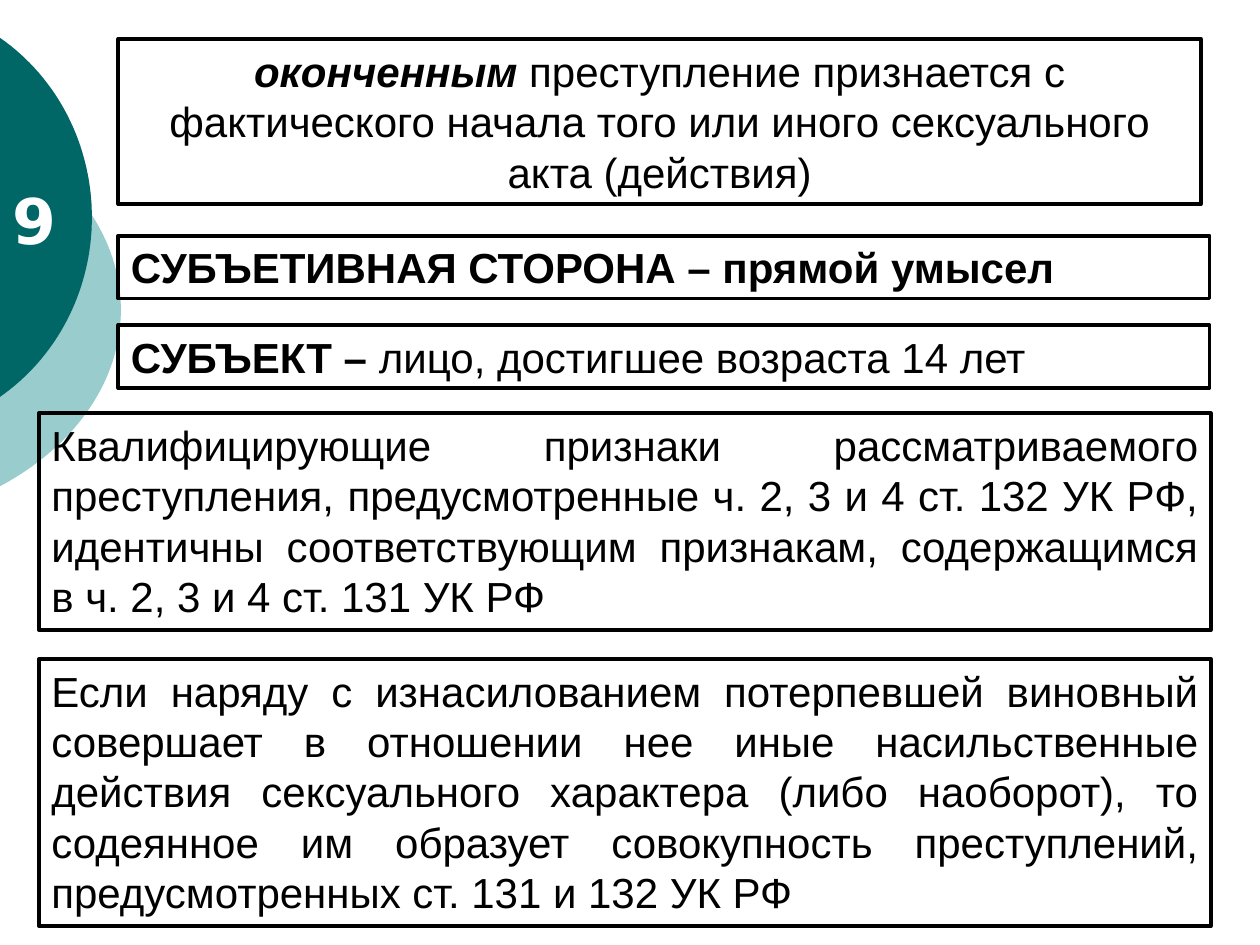
from dataclasses import dataclass
from pptx import Presentation
from pptx.dml.color import RGBColor
from pptx.enum.shapes import MSO_SHAPE as Shape
from pptx.enum.text import MSO_ANCHOR as Anchor, MSO_AUTO_SIZE as AutoSize, PP_ALIGN as Align
from pptx.util import Inches, Pt


@dataclass(frozen=True)
class Theme:
    dark: RGBColor = RGBColor(0x00, 0x66, 0x66)
    light: RGBColor = RGBColor(0x99, 0xCC, 0xCC)
    ink: RGBColor = RGBColor(0, 0, 0)
    paper: RGBColor = RGBColor(255, 255, 255)
    body_font: str = "Arial"
    number_font: str = "DejaVu Sans"
    body_size: Pt = Pt(24)
    number_size: Pt = Pt(36)
    border: Pt = Pt(2.25)


THEME = Theme()
CURVE_STEPS = 32

STATEMENTS = [
    ((0.94, 1.87, 8.66, 0.5), Align.LEFT,
     [("СУБЪЕТИВНАЯ СТОРОНА – прямой умысел", True, False)]),
    ((0.94, 2.58, 8.66, 0.5), Align.LEFT,
     [("СУБЪЕКТ – ", True, False), ("лицо, достигшее возраста 14 лет", False, False)]),
    ((0.31, 3.28, 9.3, 1.72), Align.JUSTIFY,
     [("Квалифицирующие признаки рассматриваемого преступления, предусмотренные "
       "ч. 2, 3 и 4 ст. 132 УК РФ, идентичны соответствующим признакам, "
       "содержащимся в ч. 2, 3 и 4 ст. 131 УК РФ", False, False)]),
    ((0.94, 0.31, 8.59, 1.31), Align.CENTER,
     [("оконченным ", True, True),
      ("преступление признается с фактического начала того или иного "
       "сексуального акта (действия)", False, False)]),
    ((0.31, 5.23, 9.3, 2.12), Align.JUSTIFY,
     [("Если наряду с изнасилованием потерпевшей виновный совершает в отношении "
       "нее иные насильственные действия сексуального характера (либо наоборот), "
       "то содеянное им образует совокупность преступлений, предусмотренных "
       "ст. 131 и 132 УК РФ", False, False)]),
]


def curve_points(start, first_control, second_control, end):
    points = []
    for step in range(CURVE_STEPS + 1):
        t = step / CURVE_STEPS
        weights = ((1 - t) ** 3, 3 * t * (1 - t) ** 2, 3 * t ** 2 * (1 - t), t ** 3)
        controls = (start, first_control, second_control, end)
        points.append(tuple(
            Inches(sum(weight * point[axis] for weight, point in zip(weights, controls)))
            for axis in (0, 1)))
    return points


def add_disc_edge(slide, box, shoulder, bend, color):
    left, top, width, height = box
    right, bottom, middle = left + width, top + height, top + height / 2
    upper = curve_points((left, top), (left + shoulder, top + bend),
                         (right, middle - height * 0.2), (right, middle))
    lower = curve_points((right, middle), (right, middle + height * 0.2),
                         (left + shoulder, bottom - bend), (left, bottom))
    outline = upper + lower[1:]
    builder = slide.shapes.build_freeform(*outline[0], scale=1.0)
    builder.add_line_segments(outline[1:], close=True)
    shape = builder.convert_to_shape()
    shape.shadow.inherit = False
    shape.fill.solid()
    shape.fill.fore_color.rgb = color
    shape.line.fill.background()


def add_slide_number(slide, box, number):
    text_frame = slide.shapes.add_textbox(*map(Inches, box)).text_frame
    text_frame.word_wrap = True
    text_frame.text = number
    font = text_frame.paragraphs[0].runs[0].font
    font.name, font.size, font.bold = THEME.number_font, THEME.number_size, True
    font.color.rgb = THEME.paper


def add_statement(slide, box, alignment, parts):
    shape = slide.shapes.add_shape(Shape.RECTANGLE, *map(Inches, box))
    shape.shadow.inherit = False
    shape.fill.background()
    shape.line.color.rgb = THEME.ink
    shape.line.width = THEME.border
    text_frame = shape.text_frame
    text_frame.word_wrap = True
    text_frame.auto_size = AutoSize.SHAPE_TO_FIT_TEXT
    text_frame.vertical_anchor = Anchor.TOP
    paragraph = text_frame.paragraphs[0]
    paragraph.alignment = alignment
    for text, bold, italic in parts:
        run = paragraph.add_run()
        run.text = text
        font = run.font
        font.name, font.size = THEME.body_font, THEME.body_size
        font.bold, font.italic = bold, italic
        font.color.rgb = THEME.ink


def main():
    presentation = Presentation()
    presentation.slide_width, presentation.slide_height = Inches(10), Inches(7.5)
    slide = presentation.slides.add_slide(presentation.slide_layouts[6])
    add_disc_edge(slide, (0, 1.06, 0.96, 2.8), 0.6, 0.32, THEME.light)
    add_disc_edge(slide, (0, 0.3, 0.73, 2.85), 0.46, 0.32, THEME.dark)
    add_slide_number(slide, (0, 1.39, 0.95, 0.7), "9")
    for box, alignment, parts in STATEMENTS:
        add_statement(slide, box, alignment, parts)
    presentation.save("out.pptx")


if __name__ == "__main__":
    main()
